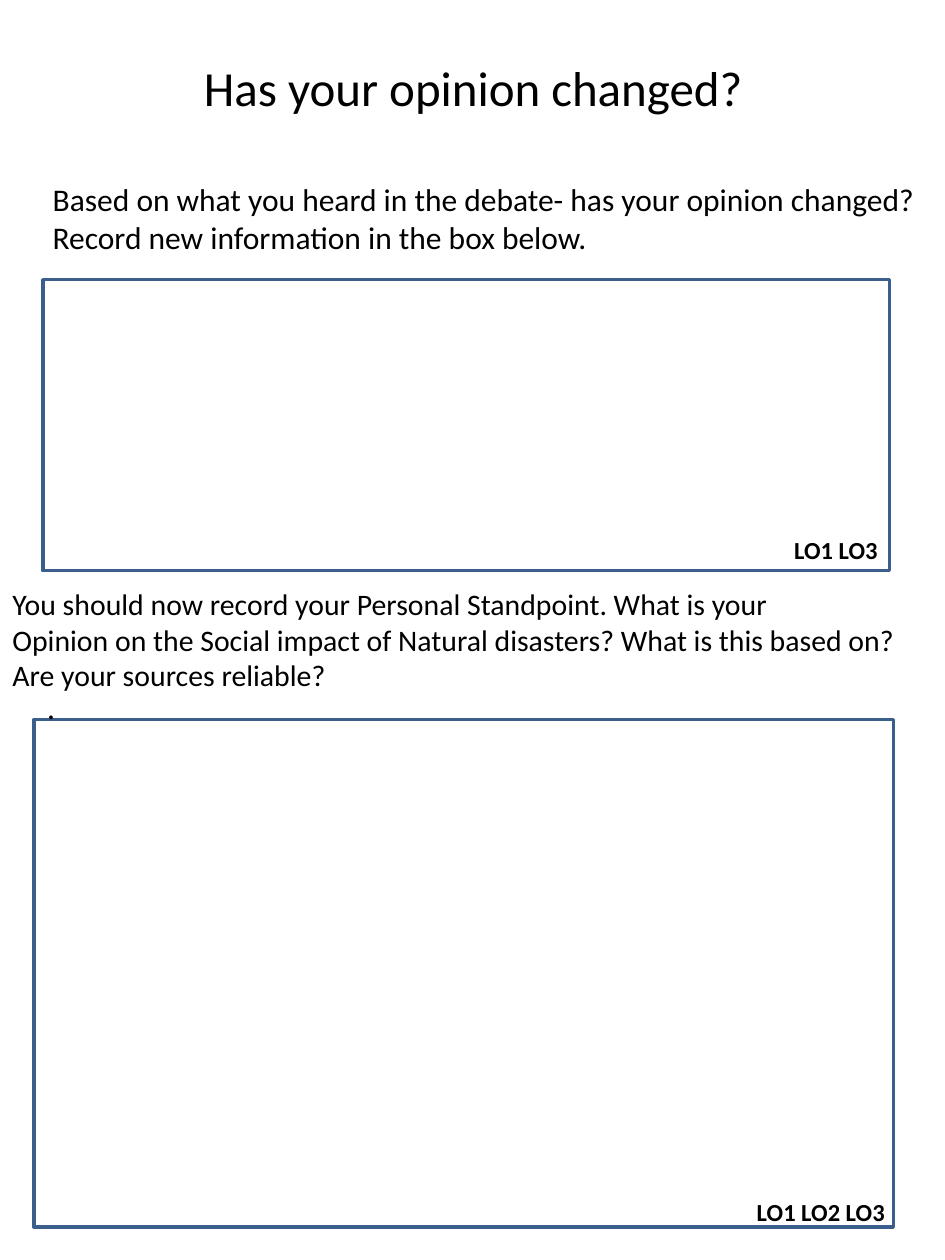
from pptx import Presentation
from pptx.dml.color import RGBColor
from pptx.enum.shapes import MSO_SHAPE
from pptx.enum.text import MSO_ANCHOR, PP_ALIGN
from pptx.util import Inches, Pt

RECT = MSO_SHAPE.RECTANGLE
LEFT, CENTER = PP_ALIGN.LEFT, PP_ALIGN.CENTER
TOP, MIDDLE = MSO_ANCHOR.TOP, MSO_ANCHOR.MIDDLE


def rgb(value):
    return RGBColor.from_string(value)


def add_text(slide, box, lines, size, align=LEFT, bold=False, anchor=TOP, wrap=False):
    tf = slide.shapes.add_textbox(*map(Inches, box)).text_frame
    tf.word_wrap = wrap
    tf.vertical_anchor = anchor
    tf.text = "\n".join(lines)
    for p in tf.paragraphs:
        p.alignment = align
        p.font.name = "Calibri"
        p.font.size = Pt(size)
        p.font.bold = bold
        p.font.color.rgb = rgb("000000")
    return tf


prs = Presentation()
prs.slide_width, prs.slide_height = Inches(7.5), Inches(10)
s = prs.slides.add_slide(prs.slide_layouts[6])

# Answer boxes: standpoint, then new information
for box in [(0.27, 5.71, 6.82, 4.03), (0.34, 2.22, 6.72, 2.31)]:
    sp = s.shapes.add_shape(RECT, *map(Inches, box))
    sp.shadow.inherit = False
    sp.fill.background()
    sp.line.color.rgb = rgb("3A5F8C")
    sp.line.width = Pt(2)

# Title and instructions
add_text(s, (0.38, 0.4, 6.75, 0.58), ["Has your opinion changed?"], 28,
         align=CENTER, anchor=MIDDLE, wrap=True)
add_text(s, (0.32, 1.38, 7.14, 2.83), [
    "Based on what you heard in the debate- has your opinion changed?",
    "Record new information in the box below.",
], 18)
stop = add_text(s, (0.22, 5.11, 6.72, 1.01), [" ."], 18, wrap=True)
stop.margin_top = Inches(0.35)  # one line down
add_text(s, (0, 4.6, 7.26, 0.96), [
    "You should now record your Personal Standpoint. What is your",
    "Opinion on the Social impact of Natural disasters? What is this based on?",
    "Are your sources reliable?",
], 17)

# Learning outcome labels
for box, label in [((6.2, 4.2, 0.87, 0.34), "LO1 LO3"),
                   ((5.9, 9.45, 1.23, 0.34), "LO1 LO2 LO3")]:
    add_text(s, box, [label], 14, align=CENTER, bold=True)

prs.save("out.pptx")
